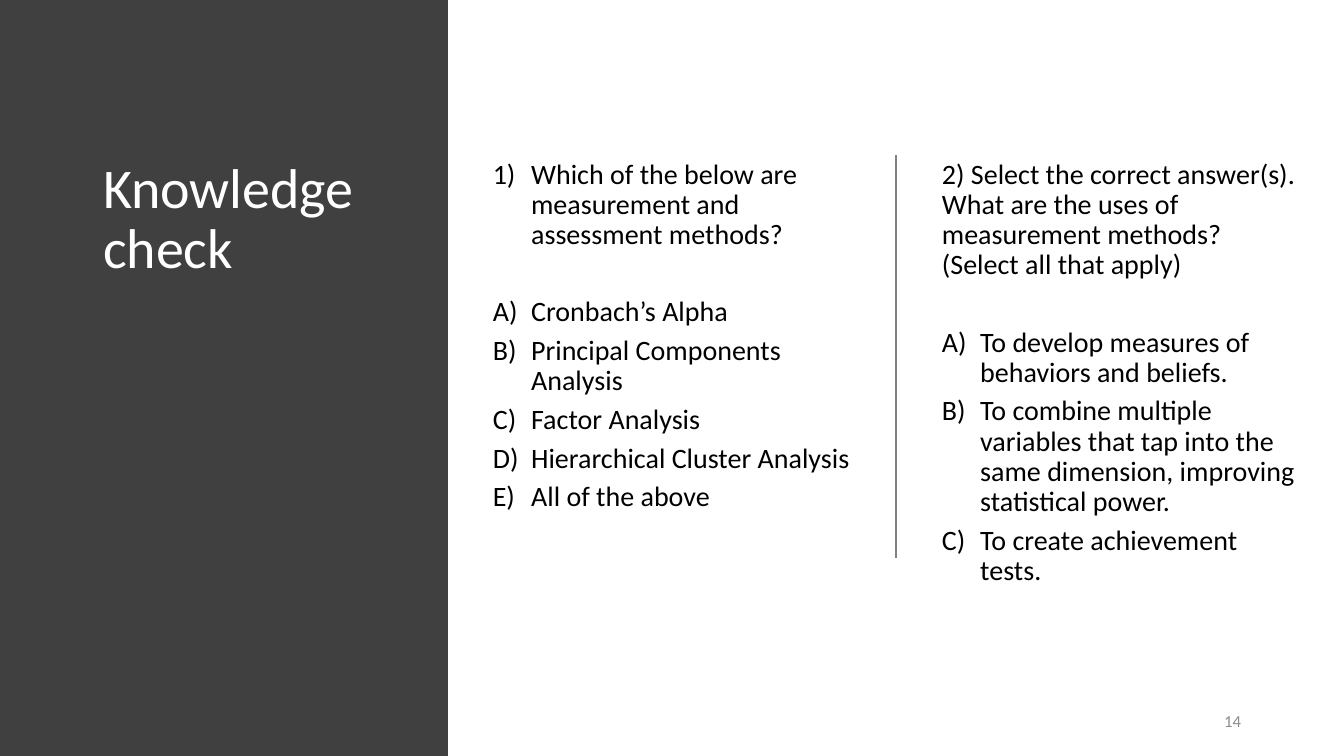
from lxml.etree import SubElement
from pptx import Presentation
from pptx.dml.color import RGBColor
from pptx.enum.shapes import MSO_CONNECTOR as Connector, MSO_SHAPE as Shape
from pptx.enum.text import MSO_ANCHOR as Anchor, MSO_AUTO_SIZE as AutoSize, PP_ALIGN as Align
from pptx.oxml.ns import qn
from pptx.util import Inches, Pt

WIDTH, HEIGHT = Inches(13.33), Inches(7.5)
COLUMNS = ROWS = 12
TOP, DEPTH = 2.46, 7.63  # shared rows of title and questions
NUMBERS, LETTERS = "arabicParenR", "alphaUcParenR"


def color(hex_code):
    return RGBColor.from_string(hex_code)


def write(paragraph, text, size=20, ink="000000", font="Calibri", align=Align.LEFT,
          spacing=0.9, after=0, numbering=None):
    """Fill a paragraph with formatted text, numbered if asked."""
    run = paragraph.add_run()
    run.text = text
    run.font.name, run.font.size = font, Pt(size)
    run.font.color.rgb = color(ink)
    paragraph.alignment = align
    paragraph.line_spacing = spacing
    paragraph.space_before, paragraph.space_after = Pt(0), Pt(after)
    properties = paragraph._p.get_or_add_pPr()
    indent = Inches(0.38) if numbering else 0
    properties.set("marL", str(indent))
    properties.set("indent", str(-indent))
    if numbering:
        SubElement(properties, qn("a:buAutoNum"), type=numbering)
    else:
        SubElement(properties, qn("a:buNone"))


class QuizSlide:
    """Holds the slide, its colours and a 12 by 12 grid."""
    dark, light, rule, muted = "404040", "FFFFFF", "808080", "8C8C8C"

    def __init__(self, deck):
        self.slide = deck.slides.add_slide(deck.slide_layouts[3])

    def cell(self, column, row, columns, rows):
        return (int(column * WIDTH / COLUMNS), int(row * HEIGHT / ROWS),
                int(columns * WIDTH / COLUMNS), int(rows * HEIGHT / ROWS))

    def panel(self, *grid):
        side = self.slide.shapes.add_shape(Shape.RECTANGLE, *self.cell(*grid))
        side.shadow.inherit = False
        side.fill.solid()
        side.fill.fore_color.rgb = color(self.dark)
        side.line.fill.background()
        self.slide.shapes._spTree.insert(2, side._element)  # behind the title

    def divider(self, column, top, bottom):
        x, y, _, length = self.cell(column, top, 0, bottom - top)
        line = self.slide.shapes.add_connector(Connector.STRAIGHT, x, y, x, y + length)
        line.line.color.rgb = color(self.rule)
        line.line.width = Pt(1)
        SubElement(line._element.spPr, qn("a:effectLst"))

    def place(self, index, *grid):
        holder = self.slide.placeholders[index]
        holder.left, holder.top, holder.width, holder.height = self.cell(*grid)
        frame = holder.text_frame
        frame.word_wrap, frame.auto_size = True, AutoSize.NONE
        frame.vertical_anchor = Anchor.TOP
        return frame

    def title(self, text, *grid):
        write(self.place(0, *grid).paragraphs[0], text, size=40, ink=self.light)

    def question(self, index, column, prompt, answers, numbering=None):
        frame = self.place(index, column, TOP, 3.38, DEPTH)
        write(frame.paragraphs[0], prompt, after=33.5, numbering=numbering)
        for answer in answers:
            write(frame.add_paragraph(), answer, after=6, numbering=LETTERS)

    def page_number(self, text, *grid):
        frame = self.slide.shapes.add_textbox(*self.cell(*grid)).text_frame
        frame.word_wrap, frame.vertical_anchor = True, Anchor.MIDDLE
        write(frame.paragraphs[0], text, size=12, ink=self.muted, align=Align.RIGHT, spacing=1.0)


def main():
    deck = Presentation()
    deck.slide_width, deck.slide_height = WIDTH, HEIGHT
    quiz = QuizSlide(deck)

    # Dark side with the title
    quiz.panel(0, 0, 4, ROWS)
    quiz.title("Knowledge check", 0.83, TOP, 2.85, DEPTH)

    # Two questions with a line between them
    quiz.question(1, 4.31, "Which of the below are measurement and assessment methods?", [
        "Cronbach’s Alpha",
        "Principal Components Analysis",
        "Factor Analysis",
        "Hierarchical Cluster Analysis",
        "All of the above",
    ], numbering=NUMBERS)
    quiz.divider(8, TOP, 8.86)
    quiz.question(2, 8.32, "2) Select the correct answer(s). What are the uses of "
                  "measurement methods? (Select all that apply)", [
        "To develop measures of behaviors and beliefs.",
        "To combine multiple variables that tap into the same dimension, "
        "improving statistical power.",
        "To create achievement tests.",
    ])

    # Page number
    quiz.page_number("14", 9.05, 11.12, 2.12, 0.64)
    deck.save("out.pptx")


if __name__ == "__main__":
    main()
